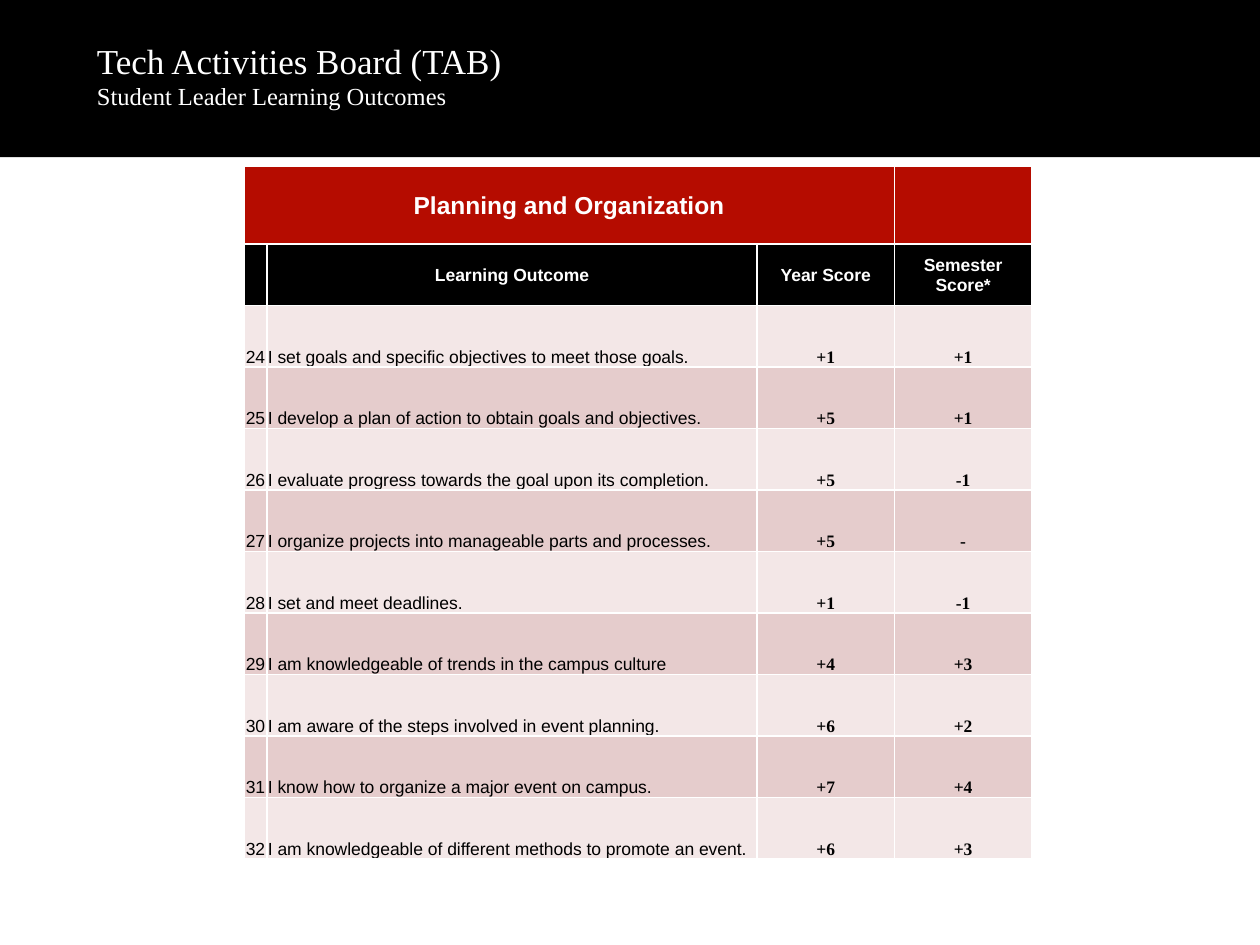
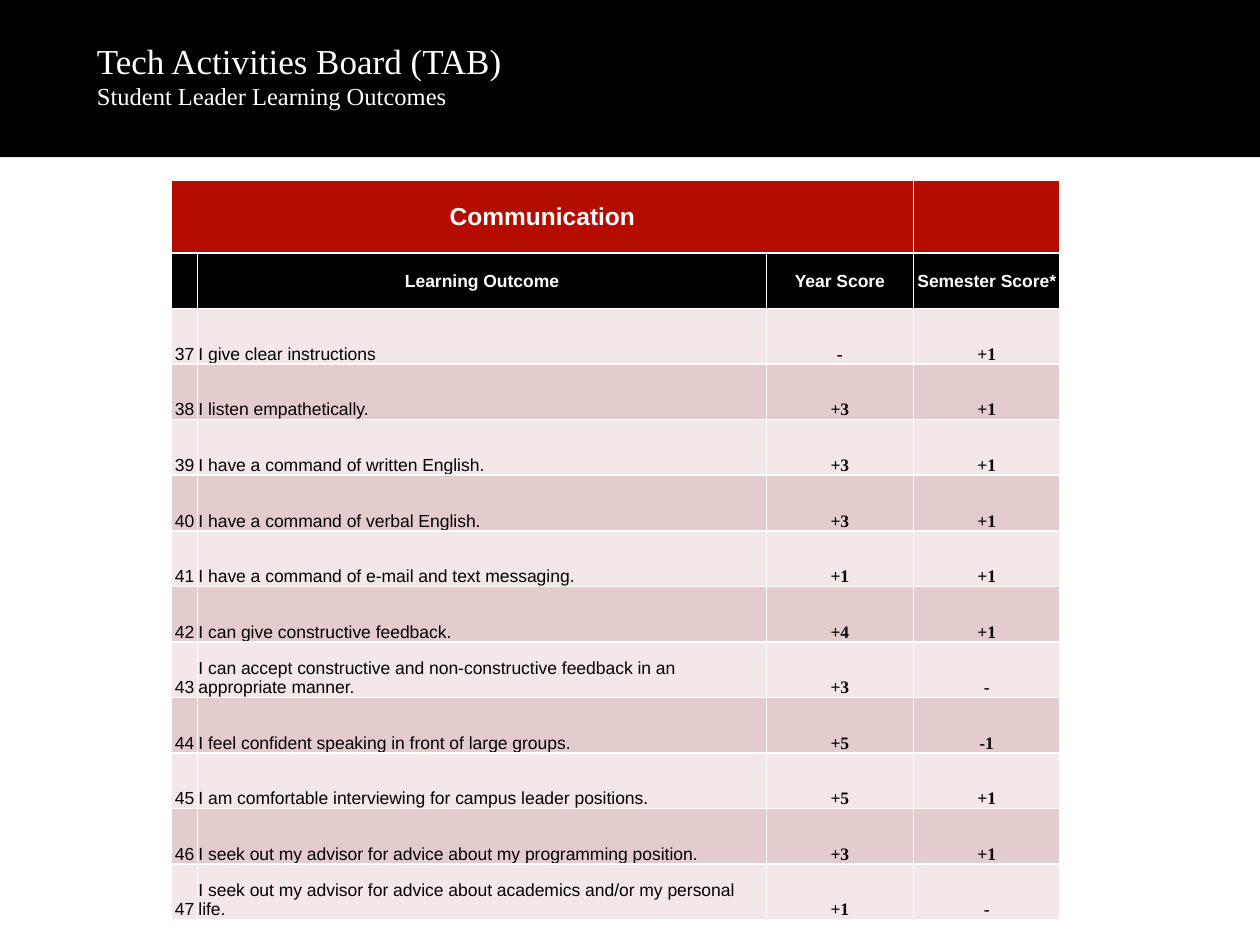
from lxml.etree import SubElement
from pptx import Presentation
from pptx.dml.color import RGBColor
from pptx.enum.shapes import MSO_SHAPE
from pptx.enum.text import MSO_ANCHOR as Anchor, MSO_AUTO_SIZE as AutoSize, PP_ALIGN as Align
from pptx.oxml.ns import qn
from pptx.util import Cm, Pt

BLACK, WHITE, RED = "000000", "FFFFFF", "B50C00"
BANDS = ["F3E7E7", "E5CCCC"]
SANS, SERIF = "Arial", "Times New Roman"
HEADINGS = ["", "Learning Outcome", "Year Score", "Semester Score*"]

# Per slide: topic, left and top, column widths, heights of topic row and other rows (cm),
# first outcome number, and the outcomes with year and semester scores
sections = [
    ("Planning and Organization", (4.92, 3.36), [0.46, 9.88, 2.77, 2.77], (1.56, 1.24), 24, [
        ("I set goals and specific objectives to meet those goals.", "+1", "+1"),
        ("I develop a plan of action to obtain goals and objectives.", "+5", "+1"),
        ("I evaluate progress towards the goal upon its completion.", "+5", "-1"),
        ("I organize projects into manageable parts and processes.", "+5", "-"),
        ("I set and meet deadlines.", "+1", "-1"),
        ("I am knowledgeable of trends in the campus culture", "+4", "+3"),
        ("I am aware of the steps involved in event planning.", "+6", "+2"),
        ("I know how to organize a major event on campus.", "+7", "+4"),
        ("I am knowledgeable of different methods to promote an event.", "+6", "+3"),
    ]),
    ("Communication", (3.46, 3.64), [0.52, 11.47, 2.96, 2.96], (1.46, 1.12), 37, [
        ("I give clear instructions", "-", "+1"),
        ("I listen empathetically.", "+3", "+1"),
        ("I have a command of written English.", "+3", "+1"),
        ("I have a command of verbal English.", "+3", "+1"),
        ("I have a command of e-mail and text messaging.", "+1", "+1"),
        ("I can give constructive feedback.", "+4", "+1"),
        ("I can accept constructive and non-constructive feedback in an appropriate manner.",
         "+3", "-"),
        ("I feel confident speaking in front of large groups.", "+5", "-1"),
        ("I am comfortable interviewing for campus leader positions.", "+5", "+1"),
        ("I seek out my advisor for advice about my programming position.", "+3", "+1"),
        ("I seek out my advisor for advice about academics and/or my personal life.",
         "+1", "-"),
    ]),
]


def rgb(value):
    return RGBColor.from_string(value)


def style_runs(paragraph, size, face, colour, bold=False):
    for run in paragraph.runs:
        run.font.size = Pt(size)
        run.font.name = face
        run.font.color.rgb = rgb(colour)
        run.font.bold = bold


prs = Presentation()
prs.slide_width, prs.slide_height = Cm(25.4), Cm(19.05)

# The title place is set once, on the layout
layout = prs.slide_layouts[5]
layout_title = layout.placeholders[0]
layout_title.left, layout_title.top = Cm(1.7), Cm(-0.08)
layout_title.width, layout_title.height = Cm(20.88), Cm(3.18)

slides = [prs.slides.add_slide(layout) for _ in sections]

# The black header band is moved to the layout, behind everything else
header_band = slides[0].shapes.add_shape(MSO_SHAPE.RECTANGLE, 0, 0, prs.slide_width, Cm(3.17))
header_band.shadow.inherit = False
header_band.fill.solid()
header_band.fill.fore_color.rgb = rgb(BLACK)
header_band.line.fill.background()
layout.shapes.element.insert(2, header_band.element)

for slide, (topic, (left, top), widths, heights, first_number, outcomes) in zip(slides, sections):
    title_frame = slide.shapes.title.text_frame
    title_frame.text = "Tech Activities Board (TAB)\vStudent Leader Learning Outcomes"
    title_frame.vertical_anchor = Anchor.MIDDLE
    title_frame.auto_size = AutoSize.NONE
    heading = title_frame.paragraphs[0]
    heading.alignment = Align.LEFT
    style_runs(heading, 20, SERIF, WHITE)
    heading.runs[1].font.size = Pt(14)
    for line_break in slide.shapes.title.element.iter(qn("a:br")):
        SubElement(line_break, qn("a:rPr"), sz="2000")

    rows = [[topic, "", "", ""], HEADINGS]
    rows += [[str(number), *outcome] for number, outcome in enumerate(outcomes, first_number)]
    row_heights = [heights[0]] + [heights[1]] * (len(rows) - 1)
    scores = slide.shapes.add_table(len(rows), len(widths), Cm(left), Cm(top),
                                    Cm(sum(widths)), Cm(sum(row_heights))).table
    for column, width in zip(scores.columns, widths):
        column.width = Cm(width)
    for row, height in zip(scores.rows, row_heights):
        row.height = Cm(height)
    scores.cell(0, 0).merge(scores.cell(0, 2))

    for r, texts in enumerate(rows):
        is_header = r < 2
        for c, text in enumerate(texts):
            cell = scores.cell(r, c)
            cell.margin_left = cell.margin_right = cell.margin_top = Cm(0.02)
            cell.margin_bottom = 0
            cell.vertical_anchor = Anchor.MIDDLE if is_header else Anchor.BOTTOM
            cell.fill.solid()
            cell.fill.fore_color.rgb = rgb([RED, BLACK][r] if is_header else BANDS[r % 2])
            if not text:
                continue
            cell.text_frame.text = text
            entry = cell.text_frame.paragraphs[0]
            entry.alignment = Align.LEFT if c == 1 and not is_header else Align.CENTER
            if is_header:
                style_runs(entry, 14 if r == 0 else 10, SANS, WHITE, bold=True)
            else:
                is_score = c > 1
                style_runs(entry, 10, SERIF if is_score else SANS, BLACK, bold=is_score)

prs.save("out.pptx")
